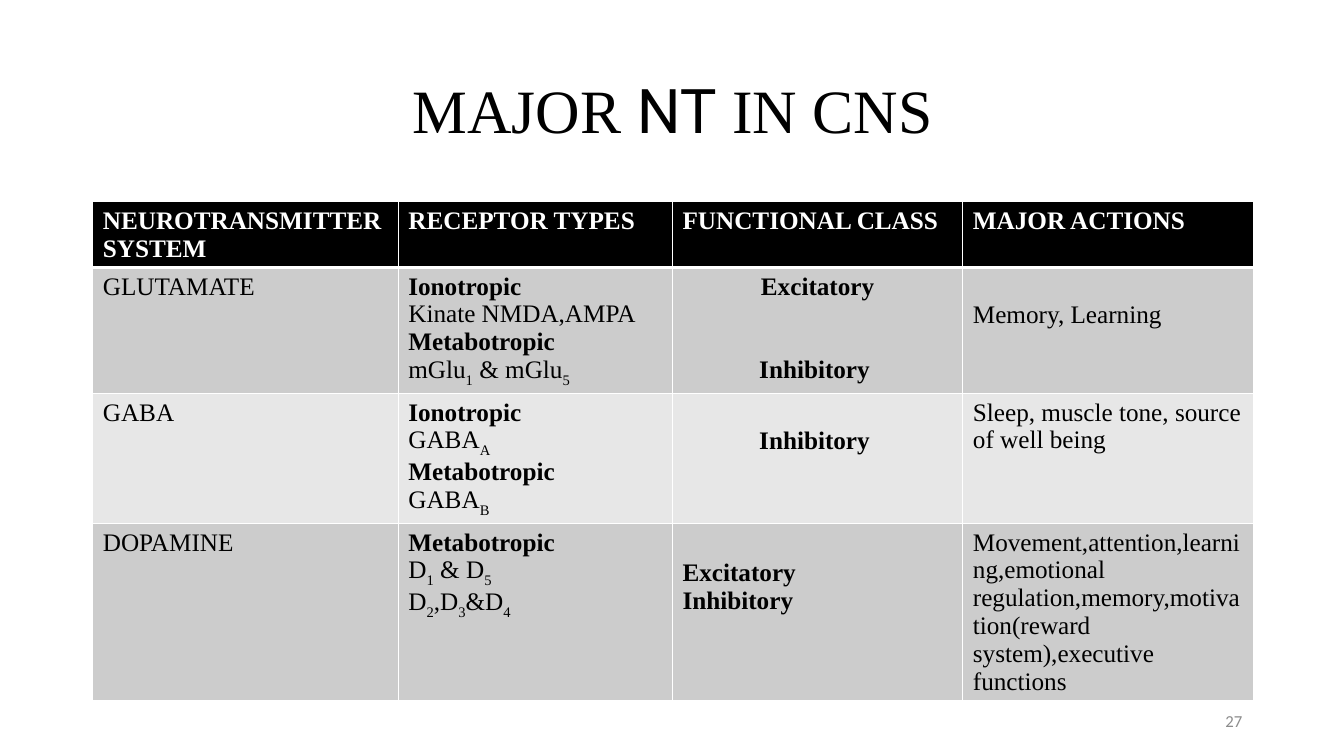
from dataclasses import dataclass

from lxml import etree
from pptx import Presentation
from pptx.dml.color import RGBColor
from pptx.enum.text import MSO_ANCHOR, PP_ALIGN
from pptx.oxml.ns import qn
from pptx.util import Inches, Pt

LEFT, CENTER, RIGHT = PP_ALIGN.LEFT, PP_ALIGN.CENTER, PP_ALIGN.RIGHT
MIDDLE = MSO_ANCHOR.MIDDLE


@dataclass(frozen=True)
class Theme:
    ink: str = "000000"
    paper: str = "FFFFFF"
    dark_band: str = "CCCCCC"
    light_band: str = "E7E7E7"
    muted: str = "8C8C8C"
    serif: str = "Times New Roman"
    accent: str = "Roboto"
    sans: str = "Calibri"
    title_size: int = 44
    table_size: int = 18
    subscript_offset: int = -25000
    number_size: int = 12


theme = Theme()


def style_span(span, face, size, color, bold=False):
    span.font.name = face
    span.font.size = Pt(size)
    span.font.color.rgb = RGBColor.from_string(color)
    span.font.bold = bold


def add_border(cell, side, width):
    line = etree.SubElement(cell._tc.get_or_add_tcPr(), qn(f"a:{side}"), w=str(Pt(width)))
    fill = etree.SubElement(line, qn("a:solidFill"))
    etree.SubElement(fill, qn("a:srgbClr"), val=theme.paper)


deck = Presentation()
deck.slide_width, deck.slide_height = Inches(13.33), Inches(7.5)
page = deck.slides.add_slide(deck.slide_layouts[5])
margin, content_width = Inches(0.92), Inches(11.5)

title = page.shapes.title
title.left, title.top = margin, Inches(0.4)
title.width, title.height = content_width, Inches(1.45)
title.text_frame.vertical_anchor = MIDDLE
para = title.text_frame.paragraphs[0]
para.alignment = CENTER
para.line_spacing = 0.9
for text, face in (("MAJOR ", theme.serif), ("NT", theme.accent), (" IN CNS", theme.serif)):
    span = para.add_run()
    span.text = text
    style_span(span, face, theme.title_size, theme.ink)

column_widths = (3.03, 2.72, 2.88, 2.88)
row_heights = (0.64, 1.25, 1.29, 1.76)
row_fills = (theme.ink, theme.dark_band, theme.light_band, theme.dark_band)

# "*" marks a bold line; "_" lowers the next character
rows = (
    (("*NEUROTRANSMITTER", "*SYSTEM"), ("*RECEPTOR TYPES",),
     ("*FUNCTIONAL CLASS",), ("*MAJOR ACTIONS",)),
    (("GLUTAMATE",),
     ("*Ionotropic", "Kinate NMDA,AMPA", "*Metabotropic", "mGlu_1 & mGlu_5"),
     ("*Excitatory", "*Inhibitory "), ("Memory, Learning",)),
    (("GABA",), ("*Ionotropic", "GABA_A", "*Metabotropic", "GABA_B"),
     ("*Inhibitory ",), ("Sleep, muscle tone, source of well being",)),
    (("DOPAMINE",), ("*Metabotropic", "D_1 & D_5", "D_2,D_3&D_4"),
     ("*Excitatory", "*Inhibitory"),
     ("Movement,attention,learning,emotional regulation,memory,"
      "motivation(reward system),executive functions",)),
)
top_margins = {(1, 3): 0.33, (2, 2): 0.33, (3, 2): 0.35}
centered_cells = {(1, 2), (2, 2)}

table = page.shapes.add_table(
    len(rows), len(column_widths), margin, Inches(2), content_width, Inches(sum(row_heights))
).table
for column, width in zip(table.columns, column_widths):
    column.width = Inches(width)

for r, lines_by_column in enumerate(rows):
    table.rows[r].height = Inches(row_heights[r])
    for c, lines in enumerate(lines_by_column):
        cell = table.cell(r, c)
        for side in ("lnL", "lnR", "lnT", "lnB"):
            header_edge = (r, side) in ((0, "lnB"), (1, "lnT"))
            add_border(cell, side, 3 if header_edge else 1)
        cell.fill.solid()
        cell.fill.fore_color.rgb = RGBColor.from_string(row_fills[r])
        cell.margin_top = Inches(top_margins.get((r, c), 0.05))
        cell.text_frame.text = "\n".join(lines)
        for para, line in zip(cell.text_frame.paragraphs, lines):
            para.text = ""
            para.alignment = CENTER if (r, c) in centered_cells else LEFT
            first, *lowered = line.lstrip("*").split("_")
            pieces = [(first, False)]
            for part in lowered:
                pieces += [(part[0], True), (part[1:], False)]
            for text, is_subscript in pieces:
                if text:
                    span = para.add_run()
                    span.text = text
                    style_span(span, theme.serif, theme.table_size,
                               theme.ink if r else theme.paper, line.startswith("*"))
                    if is_subscript:
                        span.font._element.set("baseline", str(theme.subscript_offset))

table.cell(1, 2).text_frame.paragraphs[1].space_before = Pt(40)

number_box = page.shapes.add_textbox(Inches(9.42), Inches(6.95), Inches(3), Inches(0.4))
number_box.text_frame.word_wrap = True
number_box.text_frame.vertical_anchor = MIDDLE
number_box.text_frame.text = "27"
para = number_box.text_frame.paragraphs[0]
para.alignment = RIGHT
style_span(para.runs[0], theme.sans, theme.number_size, theme.muted)

deck.save("out.pptx")
